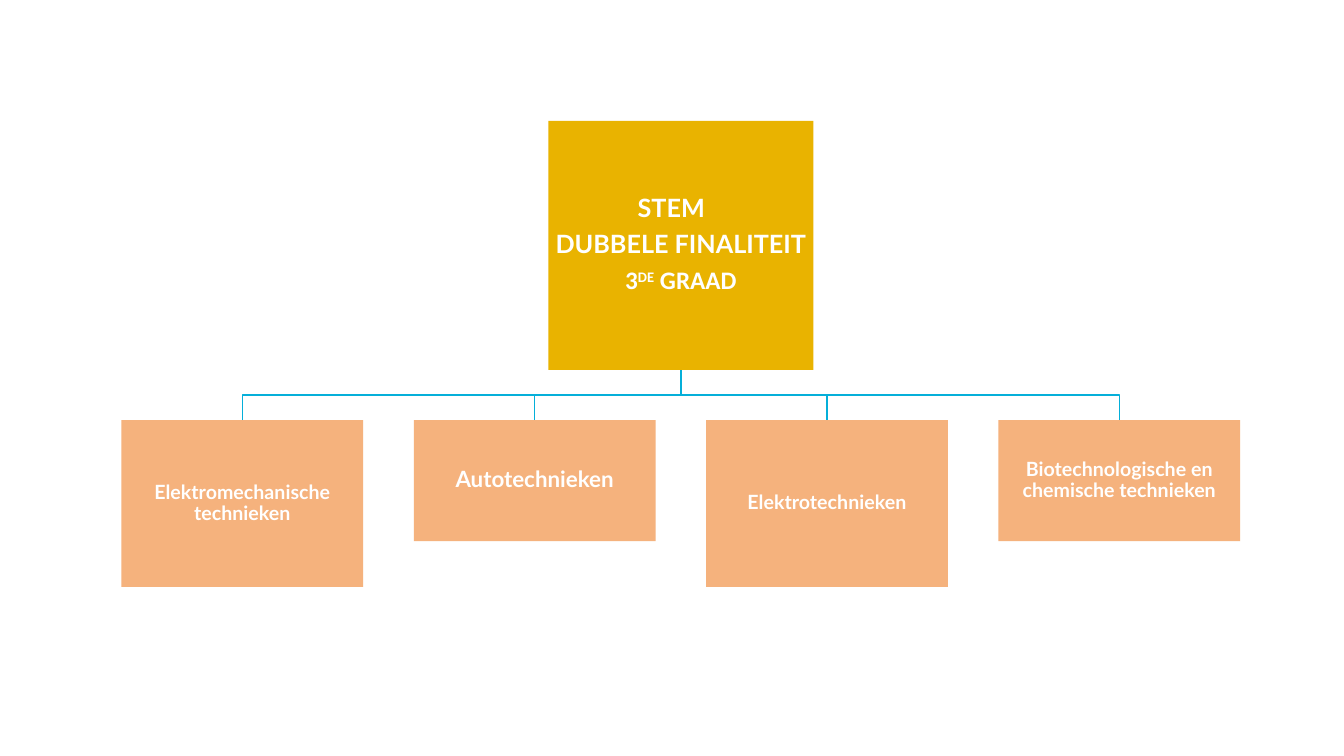
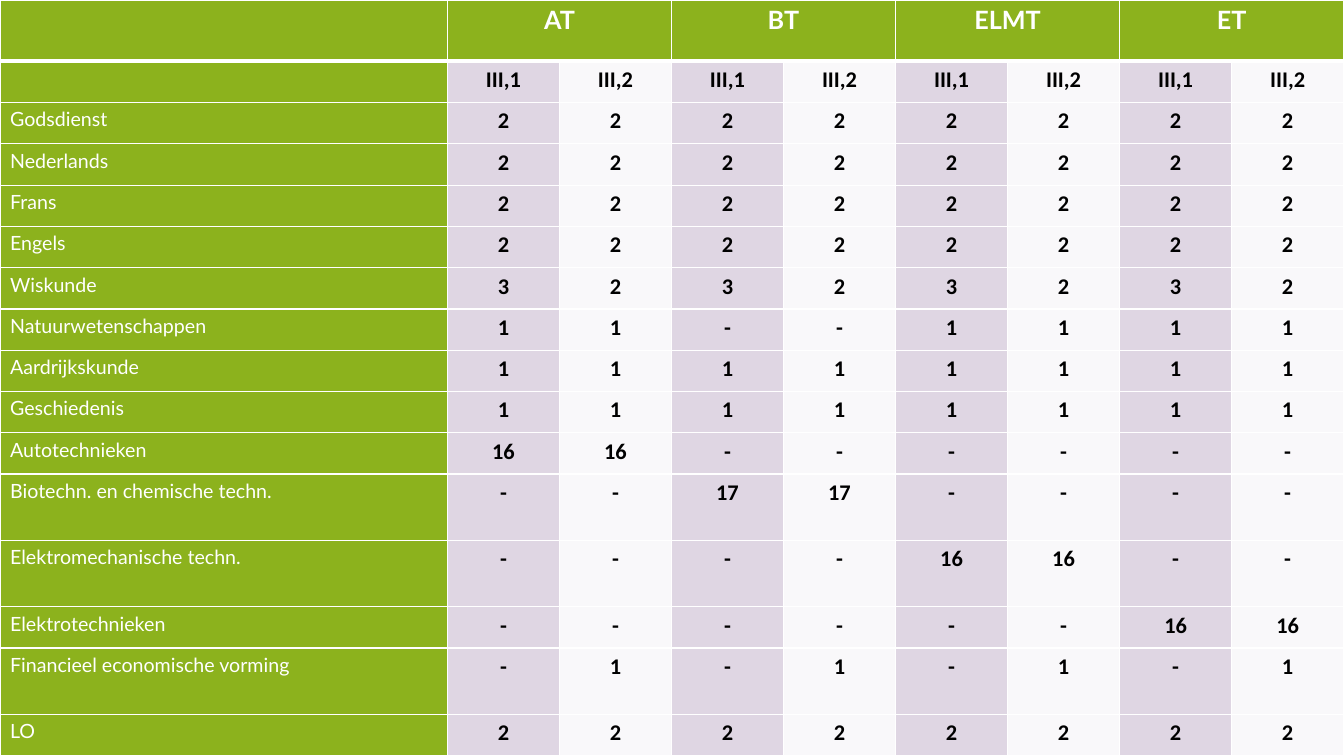
from lxml import etree
from pptx import Presentation
from pptx.dml.color import RGBColor
from pptx.enum.shapes import MSO_SHAPE
from pptx.enum.text import MSO_ANCHOR, PP_ALIGN
from pptx.oxml.ns import qn
from pptx.util import Pt

RECTANGLE = MSO_SHAPE.RECTANGLE
MIDDLE = MSO_ANCHOR.MIDDLE
CENTER, LEFT = PP_ALIGN.CENTER, PP_ALIGN.LEFT

SLIDE_W, SLIDE_H = 960, 540
LATO, CALIBRI = "Lato", "Calibri"
WHITE, BLACK = "FFFFFF", "000000"
GOLD, ORANGE, CYAN = "E9B300", "F5B27D", "05AFD9"
GREEN, LILAC, PALE_LILAC = "8CB21D", "C1AFC9", "EAE4ED"

# Content: left indent (None is centred) and runs of text, font, baseline in percent
DEGREE = [
    (63, [("STEM", LATO, 0)]),
    (None, [("DUBBELE FINALITEIT", LATO, 0)]),
    (None, [("3", CALIBRI, 0), ("DE", CALIBRI, 30), (" GRAAD", CALIBRI, 0)]),
]
# Name, text size, box height
PROGRAMMES = [
    ("Elektromechanische technieken", 14, 119),
    ("Autotechnieken", 16, 86.4),
    ("Elektrotechnieken", 14, 119),
    ("Biotechnologische en chemische technieken", 14, 86.4),
]
TRACKS = ["AT", "BT", "ELMT", "ET"]
YEARS = ["III,1", "III,2"]
# Subject and weekly hours, two years for each track
HOURS = [
    ("Godsdienst", "2 2 2 2 2 2 2 2"),
    ("Nederlands", "2 2 2 2 2 2 2 2"),
    ("Frans", "2 2 2 2 2 2 2 2"),
    ("Engels", "2 2 2 2 2 2 2 2"),
    ("Wiskunde", "3 2 3 2 3 2 3 2"),
    ("Natuurwetenschappen", "1 1 - - 1 1 1 1"),
    ("Aardrijkskunde", "1 1 1 1 1 1 1 1"),
    ("Geschiedenis", "1 1 1 1 1 1 1 1"),
    ("Autotechnieken", "16 16 - - - - - -"),
    ("Biotechn. en chemische techn.", "- - 17 17 - - - -"),
    ("Elektromechanische techn.", "- - - - 16 16 - -"),
    ("Elektrotechnieken", "- - - - - - 16 16"),
    ("Financieel economische vorming", "- 1 - 1 - 1 - 1"),
    ("LO", "2 2 2 2 2 2 2 2"),
]
TALL_SUBJECTS = {"Biotechn. en chemische techn.", "Elektromechanische techn.",
                 "Financieel economische vorming"}

# Layout
DEGREE_W, DEGREE_TOP, DEGREE_H = 189.2, 86.4, 177.8
PROGRAMME_LEFT, PROGRAMME_TOP = 86.8, 300.2
PROGRAMME_W, PROGRAMME_PITCH = 172.7, 208.8
SUBJECT_W, HOUR_W = 319.6, 80.05
HEADER_H, ROW_H, TALL_ROW_H = 43.8, 29.5, 47.4


def color(value):
    return RGBColor.from_string(value)


def write(paragraph, text, size=16, font=LATO, ink=WHITE, bold=True,
          align=CENTER, baseline=0):
    paragraph.alignment = align
    run = paragraph.add_run()
    run.text = text
    run.font.size = Pt(size)
    run.font.name = font
    run.font.bold = bold
    run.font.color.rgb = color(ink)
    if baseline:
        run.font._element.set("baseline", str(baseline * 1000))


def add_box(slide, left, top, width, height, fill):
    box = slide.shapes.add_shape(RECTANGLE, Pt(left), Pt(top), Pt(width), Pt(height))
    box.shadow.inherit = False
    box.fill.solid()
    box.fill.fore_color.rgb = color(fill)
    box.line.fill.background()
    frame = box.text_frame
    frame.word_wrap = True
    frame.vertical_anchor = MIDDLE
    frame.margin_left = frame.margin_right = Pt(0.7)
    frame.margin_top = frame.margin_bottom = Pt(0.7)
    return box


def add_branch(slide, points):
    start, *bends = [(Pt(x), Pt(y)) for x, y in points]
    outline = slide.shapes.build_freeform(*start)
    outline.add_line_segments(bends, close=False)
    branch = outline.convert_to_shape()
    branch.shadow.inherit = False
    branch.fill.background()
    branch.line.color.rgb = color(CYAN)
    branch.line.width = Pt(1)


def style_cell(cell, fill, opacity=100, top=1, bottom=1):
    properties = cell._tc.get_or_add_tcPr()
    for side, width in (("L", 1), ("R", 1), ("T", top), ("B", bottom)):
        border = etree.SubElement(properties, qn(f"a:ln{side}"), w=str(Pt(width)))
        paint = etree.SubElement(border, qn("a:solidFill"))
        etree.SubElement(paint, qn("a:srgbClr"), val=WHITE)
    cell.fill.solid()
    cell.fill.fore_color.rgb = color(fill)
    if opacity < 100:
        tint = properties.find(qn("a:solidFill")).find(qn("a:srgbClr"))
        etree.SubElement(tint, qn("a:alpha"), val=str(opacity * 1000))


def build_tree(slide):
    row_w = (len(PROGRAMMES) - 1) * PROGRAMME_PITCH + PROGRAMME_W
    center = PROGRAMME_LEFT + row_w / 2
    degree_bottom = DEGREE_TOP + DEGREE_H
    bend_y = (degree_bottom + PROGRAMME_TOP) / 2
    lefts = [PROGRAMME_LEFT + i * PROGRAMME_PITCH for i in range(len(PROGRAMMES))]

    # Branches, behind the boxes
    for left in reversed(lefts):
        middle = left + PROGRAMME_W / 2
        add_branch(slide, [(center, degree_bottom), (center, bend_y),
                           (middle, bend_y), (middle, PROGRAMME_TOP)])

    # Degree
    degree = add_box(slide, center - DEGREE_W / 2, DEGREE_TOP, DEGREE_W, DEGREE_H, GOLD)
    frame = degree.text_frame
    for i, (indent, runs) in enumerate(DEGREE):
        paragraph = frame.add_paragraph() if i else frame.paragraphs[0]
        paragraph.line_spacing = 0.9
        paragraph.space_after = Pt(6.3)
        paragraph._p.get_or_add_pPr().set("marL", str(Pt(indent or 0)))
        for text, font, baseline in runs:
            write(paragraph, text, size=18, font=font, baseline=baseline,
                  align=LEFT if indent else CENTER)

    # Programmes
    for left, (name, size, height) in zip(lefts, PROGRAMMES):
        programme = add_box(slide, left, PROGRAMME_TOP, PROGRAMME_W, height, ORANGE)
        paragraph = programme.text_frame.paragraphs[0]
        paragraph.line_spacing = 0.9
        write(paragraph, name, size=size)


def build_hours(slide):
    columns = len(TRACKS) * len(YEARS)
    rows = [("", YEARS * len(TRACKS))]
    rows += [(subject, hours.split()) for subject, hours in HOURS]
    table = slide.shapes.add_table(len(rows) + 1, columns + 1, Pt(0), Pt(0),
                                   Pt(SLIDE_W), Pt(SLIDE_H)).table
    table.horz_banding = False
    for i, column in enumerate(table.columns):
        column.width = Pt(HOUR_W if i else SUBJECT_W)

    # Track header
    table.rows[0].height = Pt(HEADER_H)
    for c in range(columns + 1):
        style_cell(table.cell(0, c), GREEN, bottom=3)
    for i, track in enumerate(TRACKS):
        first = 1 + i * len(YEARS)
        header = table.cell(0, first)
        header.merge(table.cell(0, first + len(YEARS) - 1))
        write(header.text_frame.paragraphs[0], track, size=18)

    # Years and subjects
    for r, (subject, hours) in enumerate(rows, start=1):
        table.rows[r].height = Pt(TALL_ROW_H if subject in TALL_SUBJECTS else ROW_H)
        top = 3 if r == 1 else 1
        label = table.cell(r, 0)
        style_cell(label, GREEN, top=top)
        if subject:
            write(label.text_frame.paragraphs[0], subject, size=14, bold=False, align=LEFT)
        for c, value in enumerate(hours, start=1):
            cell = table.cell(r, c)
            fill, opacity = (LILAC, 50) if c % 2 else (PALE_LILAC, 25)
            style_cell(cell, fill, opacity, top=top)
            write(cell.text_frame.paragraphs[0], value, font=CALIBRI, ink=BLACK)


def main():
    deck = Presentation()
    deck.slide_width, deck.slide_height = Pt(SLIDE_W), Pt(SLIDE_H)
    blank = deck.slide_layouts[6]
    for build in (build_tree, build_hours):
        build(deck.slides.add_slide(blank))
    deck.save("out.pptx")


if __name__ == "__main__":
    main()
